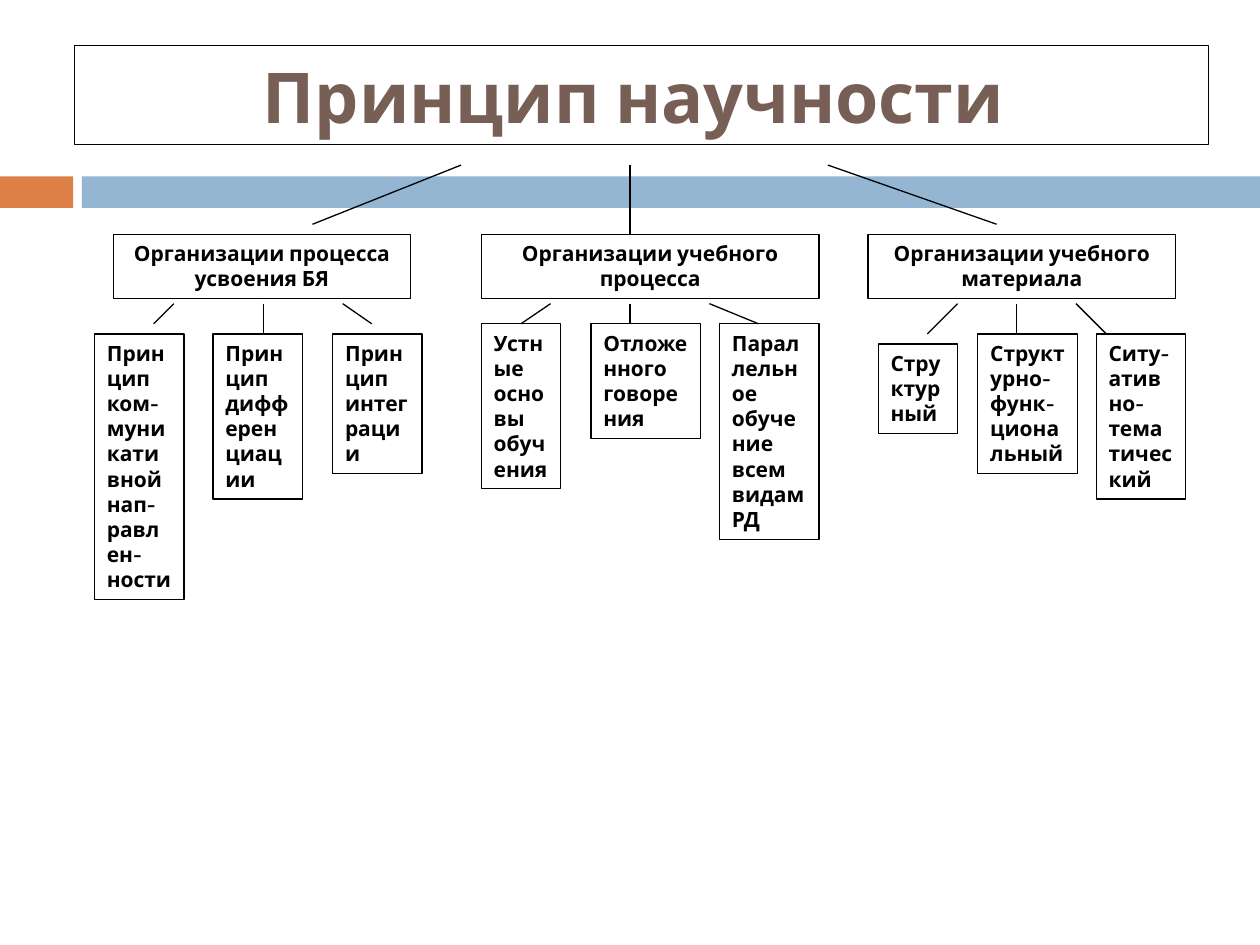
import pptx
import pptx.util
import pptx.dml.color
import pptx.enum.shapes
import pptx.enum.text

Inches, Pt = pptx.util.Inches, pptx.util.Pt
ALIGN = pptx.enum.text.PP_ALIGN
ANCHOR = pptx.enum.text.MSO_ANCHOR
AUTO_SIZE = pptx.enum.text.MSO_AUTO_SIZE

FONT = "Cabin"
COLORS = {"accent": "DD8047", "band": "94B6D2", "title": "775F55", "ink": "000000"}

BANDS = [("accent", 0, 0.58), ("band", 0.65, 9.35)]  # colour, left, width
BAND_TOP, BAND_HEIGHT = 1.4, 0.25

TITLE = ("Принцип научности ", (0.59, 0.36, 9, 0.79))
HEAD_TOP, HEAD_HEIGHT = 1.86, 0.51
STEM_TOP, BRANCH_TOP = 1.31, 2.41
LINE_HEIGHT, PADDING = 0.2, 0.11

# Stem: x at the title, x and y at the heading.
# Item: text, left, top, width, lines of text, branch (x at top, x and y at end).
GROUPS = [
    {"head": "Организации процесса усвоения БЯ", "left": 0.9, "width": 2.36,
     "stem": (3.66, 2.48, 1.78),
     "items": [
         ("Принцип ком-муникативной нап-равлен-ности", 0.75, 2.65, 0.71, 10, (1.38, 1.22, 2.57)),
         ("Принцип дифференциации", 1.69, 2.65, 0.71, 6, (2.09, 2.09, 2.65)),
         ("Принцип интеграции", 2.64, 2.65, 0.71, 5, (2.72, 2.95, 2.57)),
     ]},
    {"head": "Организации учебного процесса", "left": 3.82, "width": 2.68,
     "stem": (5, 5, 1.86),
     "items": [
         ("Устные основы обучения", 3.82, 2.57, 0.63, 6, (4.37, 4.13, 2.57)),
         ("Отложенного говорения", 4.69, 2.57, 0.87, 4, (5, 5, 2.57)),
         ("Параллельное обучение всем видам РД", 5.71, 2.57, 0.79, 8, (5.63, 6.02, 2.57)),
     ]},
    {"head": "Организации учебного материала", "left": 6.89, "width": 2.44,
     "stem": (6.57, 7.91, 1.78),
     "items": [
         ("Структурный", 6.97, 2.73, 0.63, 3, (7.6, 7.36, 2.65)),
         ("Структурно-функ-циональный", 7.76, 2.65, 0.79, 5, (8.07, 8.07, 2.65)),
         ("Ситу-ативно-тематический", 8.7, 2.65, 0.71, 6, (8.54, 8.78, 2.65)),
     ]},
]


def rgb(name):
    return pptx.dml.color.RGBColor.from_string(COLORS[name])


def outline(line):
    line.color.rgb = rgb("ink")
    line.width = Pt(0.75)


def add_box(slide, text, at, align=ALIGN.LEFT, size=12, color="ink",
            anchor=ANCHOR.TOP, auto_size=AUTO_SIZE.SHAPE_TO_FIT_TEXT):
    s = slide.shapes.add_textbox(*map(Inches, at))
    outline(s.line)
    tf = s.text_frame
    tf.text = text
    tf.word_wrap = True
    tf.auto_size = auto_size
    tf.vertical_anchor = anchor
    p = tf.paragraphs[0]
    p.alignment = align
    font = p.runs[0].font
    font.name, font.size, font.bold = FONT, Pt(size), True
    font.color.rgb = rgb(color)
    return s


def add_line(slide, x1, y1, x2, y2, box, box_at):
    """Draw a line, joined to the box where it ends at the middle of its top."""
    c = slide.shapes.add_connector(pptx.enum.shapes.MSO_CONNECTOR.STRAIGHT,
                                   *map(Inches, (x1, y1, x2, y2)))
    outline(c.line)
    c._element.spPr.append(pptx.oxml.parse_xml(
        '<a:effectLst xmlns:a="http://schemas.openxmlformats.org/drawingml/2006/main"/>'))
    left, top, width = box_at[:3]
    if abs(left + width / 2 - x2) < 0.02 and abs(top - y2) < 0.02:
        c.end_connect(box, 0)


def main():
    prs = pptx.Presentation()
    prs.slide_width, prs.slide_height = Inches(10), Inches(7.5)
    slide = prs.slides.add_slide(prs.slide_layouts[6])

    for color, left, width in BANDS:
        s = slide.shapes.add_shape(pptx.enum.shapes.MSO_SHAPE.RECTANGLE,
                                   *map(Inches, (left, BAND_TOP, width, BAND_HEIGHT)))
        s.shadow.inherit = False
        s.fill.solid()
        s.fill.fore_color.rgb = rgb(color)
        s.line.fill.background()

    add_box(slide, *TITLE, align=ALIGN.CENTER, size=40, color="title",
            anchor=ANCHOR.MIDDLE, auto_size=AUTO_SIZE.NONE)

    for group in GROUPS:
        at = (group["left"], HEAD_TOP, group["width"], HEAD_HEIGHT)
        head = add_box(slide, group["head"], at, align=ALIGN.CENTER)
        x1, x2, y2 = group["stem"]
        add_line(slide, x1, STEM_TOP, x2, y2, head, at)
        for text, left, top, width, lines, (x1, x2, y2) in group["items"]:
            at = (left, top, width, lines * LINE_HEIGHT + PADDING)
            item = add_box(slide, text, at)
            add_line(slide, x1, BRANCH_TOP, x2, y2, item, at)

    prs.save("out.pptx")


if __name__ == "__main__":
    main()
